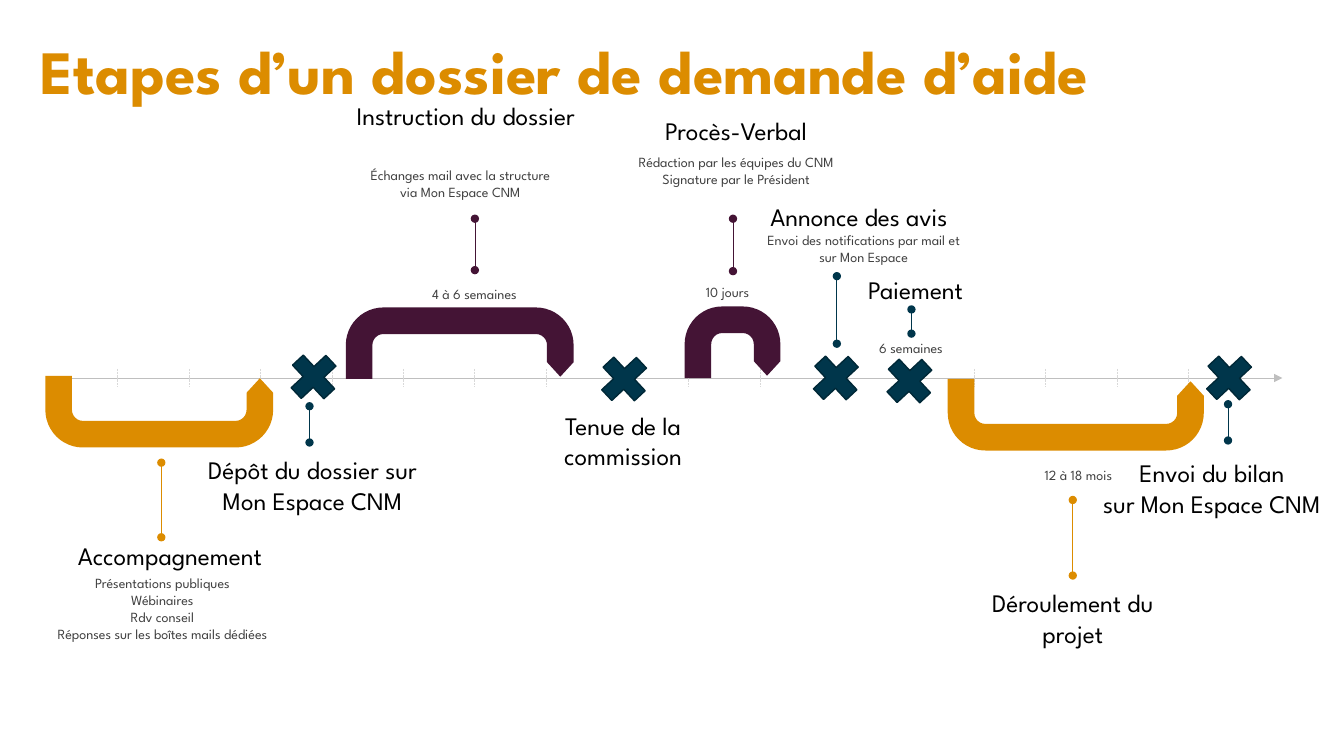
"""Build the slide showing the steps of a grant application on a timeline."""
from lxml import etree
from pptx import Presentation
from pptx.dml.color import RGBColor
from pptx.enum.dml import MSO_LINE
from pptx.enum.shapes import MSO_CONNECTOR, MSO_SHAPE
from pptx.enum.text import MSO_ANCHOR, MSO_AUTO_SIZE, PP_ALIGN
from pptx.oxml.ns import qn
from pptx.util import Inches, Pt

ORANGE, PLUM, NAVY = "DC8C00", "441435", "00364B"
HEADING = {"size": Pt(18), "name": "League Spartan"}
DETAIL = {"size": Pt(10), "name": "League Spartan"}
TITLE = {"size": Pt(44), "name": "League Spartan", "bold": True}


def write(box, text, font, color, frame_format, para_format):
    """Fill a box with one formatted paragraph per line of text."""
    frame = box.text_frame
    frame.text = text
    for name, value in frame_format.items():
        setattr(frame, name, value)
    for para in frame.paragraphs:
        for name, value in para_format.items():
            setattr(para, name, value)
        for span in para.runs:
            for name, value in font.items():
                setattr(span.font, name, value)
            span.font.color.rgb = RGBColor.from_string(color)


def draw_line(start, end, color, head=None, tail=None):
    """Draw a thin straight line with optional ends and return it."""
    line = page.shapes.add_connector(
        MSO_CONNECTOR.STRAIGHT, *[Inches(value) for value in (*start, *end)])
    line.line.color.rgb = RGBColor.from_string(color)
    line.line.width = Pt(0.5)
    outline = line.line._get_or_add_ln()
    for tag, kind in (("a:headEnd", head), ("a:tailEnd", tail)):
        if kind:
            etree.SubElement(outline, qn(tag), type=kind)
    etree.SubElement(line.element.spPr, qn("a:effectLst"))
    return line


deck = Presentation()
deck.slide_width, deck.slide_height = Inches(13.33), Inches(7.5)
page = deck.slides.add_slide(deck.slide_layouts[5])

title = page.shapes.title
title_place = {"left": 0.3, "top": 0.01, "width": 12.26, "height": 1.45}
for name, value in title_place.items():
    setattr(title, name, Inches(value))
write(title, "Etapes d’un dossier de demande d’aide", TITLE, ORANGE,
      {"vertical_anchor": MSO_ANCHOR.MIDDLE, "word_wrap": True,
       "auto_size": MSO_AUTO_SIZE.NONE},
      {"alignment": PP_ALIGN.LEFT, "line_spacing": 0.9})

axis_y, axis_left, tick_gap = 3.75, 0.46, 0.708
draw_line((axis_left, axis_y), (12.72, axis_y), "BFBFBF", tail="triangle")
for number in range(1, 17):
    x = axis_left + number * tick_gap
    tick = draw_line((x, axis_y - 0.09), (x, axis_y + 0.09), "D9D9D9")
    tick.line.dash_style = MSO_LINE.SQUARE_DOT

periods = [
    (0.45, 3.73, 2.26, ORANGE, True),
    (3.43, 3.05, 2.26, PLUM, False),
    (6.79, 3.04, 0.95, PLUM, False),
    (9.4, 3.76, 2.54, ORANGE, True),
]
for left, top, width, color, below_axis in periods:
    arrow = page.shapes.add_shape(
        MSO_SHAPE.U_TURN_ARROW, Inches(left), Inches(top), Inches(width), Inches(0.71))
    arrow.shadow.inherit = False
    for index, value in enumerate((0.372, 0.186, 0.203, 0.526, 0.968)):
        arrow.adjustments[index] = value
    arrow.fill.solid()
    arrow.fill.fore_color.rgb = RGBColor.from_string(color)
    arrow.line.fill.background()
    if below_axis:
        arrow.element.spPr.xfrm.set("flipV", "1")

for left, top in [(2.8, 3.42), (5.88, 3.44), (7.98, 3.43), (8.71, 3.46), (11.88, 3.43)]:
    cross = page.shapes.add_shape(
        MSO_SHAPE.MATH_PLUS, Inches(left), Inches(top), Inches(0.62), Inches(0.64))
    cross.shadow.inherit = False
    cross.rotation = 47
    cross.fill.solid()
    cross.fill.fore_color.rgb = RGBColor.from_string(NAVY)
    cross.line.color.rgb = RGBColor.from_string("002837")
    cross.line.width = Pt(1)

stems = [
    (1.6, 4.59, 5.33, ORANGE),
    (3.07, 4.03, 4.39, NAVY),
    (4.71, 2.17, 2.68, PLUM),
    (7.27, 2.17, 2.69, PLUM),
    (8.3, 2.74, 3.41, NAVY),
    (9.04, 3.07, 3.31, NAVY),
    (10.64, 4.96, 5.71, ORANGE),
    (12.18, 4.01, 4.37, NAVY),
]
for x, top, bottom, color in stems:
    draw_line((x, top), (x, bottom), color, head="oval", tail="oval")

headings = [
    (0.45, 5.36, 2.47, 0.3, "Accompagnement"),
    (1.94, 4.51, 2.32, 0.91, "Dépôt du dossier sur Mon Espace CNM"),
    (3.38, 0.99, 2.48, 1.18, "Instruction du dossier"),
    (5.43, 4.07, 1.5, 0.61, "Tenue de la commission"),
    (6.14, 1.14, 2.32, 0.3, "Procès-Verbal"),
    (7.36, 2, 2.32, 0.3, "Annonce des avis"),
    (8.47, 2.72, 1.22, 0.3, "Paiement"),
    (9.59, 5.83, 2.1, 0.61, "Déroulement du projet"),
    (10.86, 4.54, 2.32, 0.91, "Envoi du bilan\nsur Mon Espace CNM"),
]
details = [
    (0.3, 5.7, 2.62, 0.67, "Présentations publiques\nWébinaires\nRdv conseil\n"
                           "Réponses sur les boîtes mails dédiées"),
    (3.6, 1.65, 1.93, 0.98, "Échanges mail avec la structure via Mon Espace CNM"),
    (4.01, 2.83, 1.39, 0.17, "4 à 6 semaines"),
    (6.14, 1.52, 2.32, 0.5, "Rédaction par les équipes du CNM\nSignature par le Président"),
    (6.52, 2.81, 1.39, 0.17, "10 jours"),
    (7.6, 2.3, 1.93, 0.42, "Envoi des notifications par mail et sur Mon Espace"),
    (8.34, 3.37, 1.39, 0.17, "6 semaines"),
    (10, 4.63, 1.39, 0.17, "12 à 18 mois"),
]
label_frame = {"word_wrap": True, "margin_left": 0, "margin_right": 0,
               "margin_top": 0, "margin_bottom": 0}
for labels, font, color in ((headings, HEADING, "000000"), (details, DETAIL, "404040")):
    for *place, text in labels:
        box = page.shapes.add_textbox(*[Inches(value) for value in place])
        write(box, text, font, color, label_frame, {"alignment": PP_ALIGN.CENTER})

deck.save("out.pptx")
